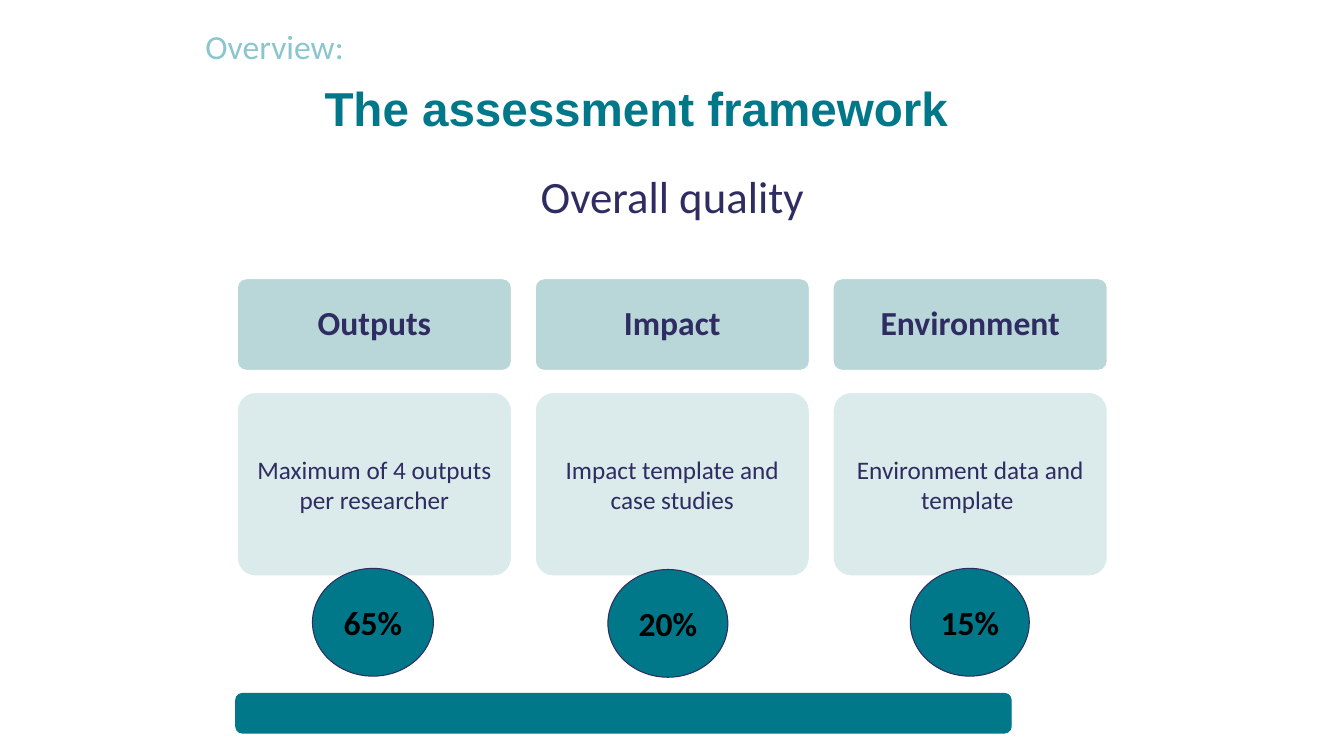
import pptx
import pptx.util
import pptx.dml.color
import pptx.enum.shapes
import pptx.enum.text
import pptx.oxml.ns
import lxml.etree

Pt = pptx.util.Pt
RGBColor = pptx.dml.color.RGBColor
SHAPE = pptx.enum.shapes.MSO_SHAPE
ALIGN = pptx.enum.text.PP_ALIGN

TEAL = RGBColor(0x00, 0x78, 0x8A)
LIGHT_TEAL = RGBColor(0x8A, 0xC6, 0xCD)
PALE_TEAL = RGBColor(0xB9, 0xD6, 0xD9)
NAVY = RGBColor(0x2E, 0x2C, 0x61)
WHITE = RGBColor(0xFF, 0xFF, 0xFF)
BLACK = RGBColor(0x00, 0x00, 0x00)


def write(box, text, size, color, bold=False, align=ALIGN.CENTER, font="Calibri"):
    frame = box.text_frame
    frame.text = text
    frame.vertical_anchor = pptx.enum.text.MSO_ANCHOR.MIDDLE
    para = frame.paragraphs[0]
    para.alignment = align
    span = para.runs[0]
    span.font.name = font
    span.font.size = Pt(size)
    span.font.bold = bold
    span.font.color.rgb = color
    return para


def add_box(kind, left, top, width, height, fill, line, line_width, inset=0):
    box = page.shapes.add_shape(kind, Pt(left), Pt(top), Pt(width), Pt(height))
    box.shadow.inherit = False
    box.fill.solid()
    box.fill.fore_color.rgb = fill
    box.line.color.rgb = line
    box.line.width = Pt(line_width)
    frame = box.text_frame
    frame.word_wrap = True
    frame.margin_left = frame.margin_right = Pt(inset)
    frame.margin_top = frame.margin_bottom = Pt(inset)
    return box


deck = pptx.Presentation()
deck.slide_width = Pt(960)
deck.slide_height = Pt(540)
page = deck.slides.add_slide(deck.slide_layouts[5])

# Title
title = page.shapes.title
title.left, title.top, title.width, title.height = Pt(224.6), Pt(46), Pt(623.5), Pt(65)
para = write(title, "The assessment framework", 34, TEAL, True, ALIGN.LEFT, "Arial")
para.line_spacing = Pt(38)

# Overall quality band
overall = add_box(SHAPE.ROUNDED_RECTANGLE, 168.5, 100.1, 623.5, 84.2, WHITE, WHITE, 1.5, 9)
overall.adjustments[0] = 0.1
write(overall, "Overall quality", 32, NAVY).line_spacing = 0.9

# Three columns: heading above a half-transparent card
columns = [
    ("Outputs", "Maximum of 4 outputs per researcher"),
    ("Impact", "Impact template and case studies"),
    ("Environment", "Environment data and template "),
]
for index, (heading, detail) in enumerate(columns):
    left = 169.2 + index * 212.8
    header = add_box(SHAPE.ROUNDED_RECTANGLE, left, 198.7, 196.5, 66.2,
                     PALE_TEAL, WHITE, 1.5, 7)
    header.adjustments[0] = 0.1
    write(header, heading, 24, NAVY, True).line_spacing = 0.9

    card = add_box(SHAPE.ROUNDED_RECTANGLE, left, 280, 196.5, 131.8,
                   PALE_TEAL, WHITE, 1.5, 5)
    card.adjustments[0] = 0.1
    write(card, detail, 18, NAVY)
    fill_color = card.fill._xPr.find(".//" + pptx.oxml.ns.qn("a:srgbClr"))
    lxml.etree.SubElement(fill_color, pptx.oxml.ns.qn("a:alpha"), val="50000")

# Bar at the foot
add_box(SHAPE.ROUNDED_RECTANGLE, 168.5, 495.4, 553.7, 28.1, TEAL, TEAL, 1)

# Weighting circles
weights = [("65%", 223.2, 406, 86.4), ("20%", 434.2, 406.8, 85.7), ("15%", 650.2, 406, 85)]
for weight, left, top, width in weights:
    circle = add_box(SHAPE.OVAL, left, top, width, 77, TEAL, NAVY, 0.75)
    circle.text_frame.word_wrap = False
    write(circle, weight, 24, BLACK, True)

# Section label
label = page.shapes.add_textbox(Pt(139.7), Pt(15.1), Pt(114.5), Pt(36))
label.text_frame.word_wrap = False
write(label, "Overview:", 24, LIGHT_TEAL, align=ALIGN.LEFT)

deck.save("out.pptx")
